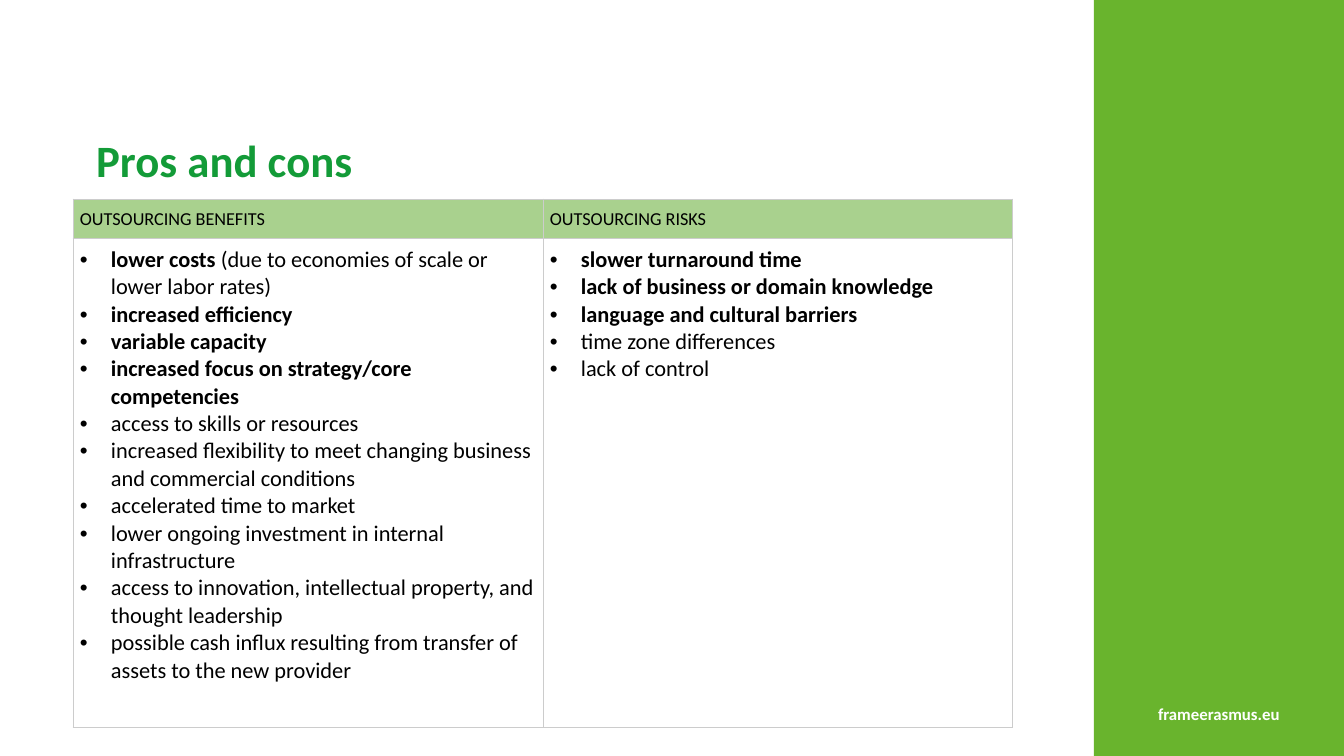
from lxml import etree
from pptx import Presentation
from pptx import util as u
from pptx.dml.color import RGBColor
from pptx.enum import shapes, text
from pptx.oxml.ns import qn

# Content: each list item is a bold part and a plain part
TITLE = "Pros and cons"
SITE = "frameerasmus.eu"
COLUMNS = [
    ("OUTSOURCING BENEFITS", [
        ("lower costs ", "(due to economies of scale or lower labor rates)"),
        ("increased efficiency", ""),
        ("variable capacity", ""),
        ("increased focus on strategy/core competencies", ""),
        ("", "access to skills or resources"),
        ("", "increased flexibility to meet changing business and commercial conditions"),
        ("", "accelerated time to market"),
        ("", "lower ongoing investment in internal infrastructure"),
        ("", "access to innovation, intellectual property, and thought leadership"),
        ("", "possible cash influx resulting from transfer of assets to the new provider"),
    ]),
    ("OUTSOURCING RISKS", [
        ("slower turnaround time", ""),
        ("lack of business or domain knowledge", ""),
        ("language and cultural barriers", ""),
        ("", "time zone differences"),
        ("", "lack of control"),
    ]),
]

# Format
COLORS = {"band": "69B42D", "title": "139B38", "header": "A9D18E",
          "cell": "FFFFFF", "text": "000000", "site": "FFFFFF", "border": "CCCCCC"}
FONT = "Calibri"
SLIDE_WIDTH, SLIDE_HEIGHT = 1344, 756
BAND_LEFT = 1094
TITLE_BOX = (86, 114, 964, 98)
SITE_BOX = (BAND_LEFT, 699, SLIDE_WIDTH - BAND_LEFT, 30)
TABLE_LEFT, TABLE_TOP, COLUMN_WIDTH = 73, 199, 470
ROW_HEIGHTS = (40, 489)
CELL_MARGIN, BULLET_INDENT = 7, 31


def px(length):
    return round(length * 914400 / 100.8)


def color(name):
    return RGBColor.from_string(COLORS[name])


def set_values(target, values):
    for name, value in values.items():
        setattr(target, name, value)


def add_run(paragraph, words, size, color_name, bold=False):
    run = paragraph.add_run()
    run.text = words
    set_values(run.font, {"name": FONT, "size": u.Pt(size), "bold": bold})
    run.font.color.rgb = color(color_name)


def add_bullet(paragraph):
    properties = paragraph._p.get_or_add_pPr()
    properties.set("marL", str(px(BULLET_INDENT)))
    properties.set("indent", str(-px(BULLET_INDENT)))
    etree.SubElement(properties, qn("a:buFont"), typeface="Arial")
    etree.SubElement(properties, qn("a:buChar"), char="•")


def format_cell(cell, fill_name, anchor):
    margins = ("margin_left", "margin_right", "margin_top", "margin_bottom")
    set_values(cell, dict.fromkeys(margins, px(CELL_MARGIN)))
    cell.vertical_anchor = anchor
    properties = cell._tc.get_or_add_tcPr()
    for side in ("lnL", "lnR", "lnT", "lnB"):
        line = etree.SubElement(properties, qn(f"a:{side}"), w=str(u.Pt(0.75)))
        fill = etree.SubElement(line, qn("a:solidFill"))
        etree.SubElement(fill, qn("a:srgbClr"), val=COLORS["border"])
    cell.fill.solid()
    cell.fill.fore_color.rgb = color(fill_name)


presentation = Presentation()
set_values(presentation, {"slide_width": px(SLIDE_WIDTH), "slide_height": px(SLIDE_HEIGHT)})
slide = presentation.slides.add_slide(presentation.slide_layouts[5])

# Green band with site address
band = slide.shapes.add_shape(shapes.MSO_SHAPE.RECTANGLE, px(BAND_LEFT), 0,
                              px(SLIDE_WIDTH - BAND_LEFT), px(SLIDE_HEIGHT))
band.shadow.inherit = False
band.fill.solid()
band.fill.fore_color.rgb = color("band")
band.line.fill.background()

site = slide.shapes.add_textbox(*map(px, SITE_BOX))
site.text_frame.word_wrap = True
paragraph = site.text_frame.paragraphs[0]
paragraph.alignment = text.PP_ALIGN.CENTER
add_run(paragraph, SITE, 12, "site", bold=True)

# Title
title = slide.shapes.title
set_values(title, dict(zip(("left", "top", "width", "height"), map(px, TITLE_BOX))))
set_values(title.text_frame, {"vertical_anchor": text.MSO_ANCHOR.MIDDLE, "word_wrap": True})
paragraph = title.text_frame.paragraphs[0]
set_values(paragraph, {"alignment": text.PP_ALIGN.LEFT, "line_spacing": 0.9})
add_run(paragraph, TITLE, 32, "title", bold=True)

# Table of benefits and risks
table = slide.shapes.add_table(2, len(COLUMNS), px(TABLE_LEFT), px(TABLE_TOP),
                               px(COLUMN_WIDTH * len(COLUMNS)), px(sum(ROW_HEIGHTS))).table
set_values(table, {"first_row": False, "horz_banding": False})
for row, height in zip(table.rows, ROW_HEIGHTS):
    row.height = px(height)

for index, (heading, items) in enumerate(COLUMNS):
    table.columns[index].width = px(COLUMN_WIDTH)
    header, body = table.cell(0, index), table.cell(1, index)
    format_cell(header, "header", text.MSO_ANCHOR.MIDDLE)
    format_cell(body, "cell", text.MSO_ANCHOR.TOP)
    add_run(header.text_frame.paragraphs[0], heading, 13, "text")
    for number, parts in enumerate(items):
        frame = body.text_frame
        paragraph = frame.add_paragraph() if number else frame.paragraphs[0]
        add_bullet(paragraph)
        for words, bold in zip(parts, (True, False)):
            if words:
                add_run(paragraph, words, 16, "text", bold)

presentation.save("out.pptx")
